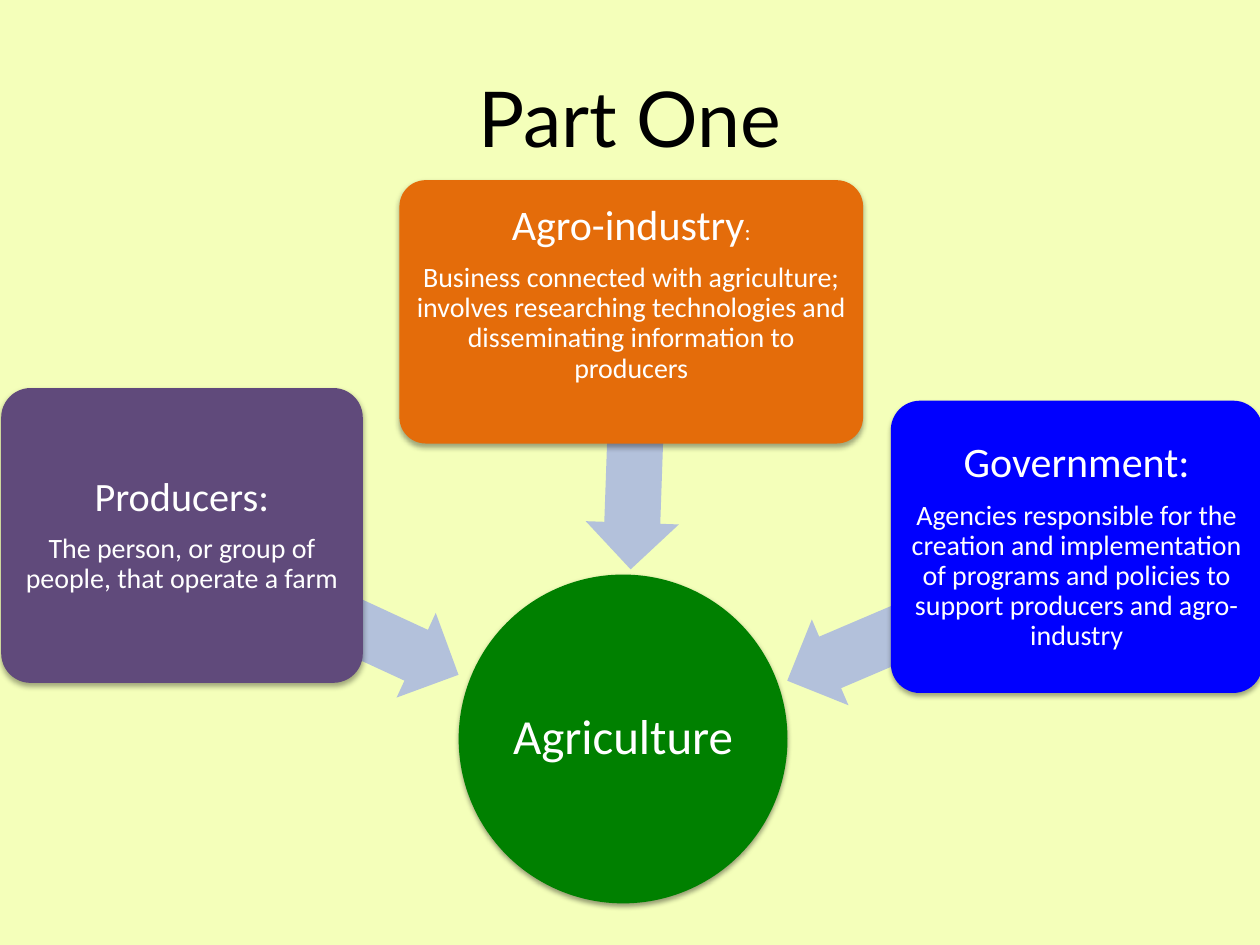
from lxml.etree import SubElement
from pptx import Presentation
from pptx.dml.color import RGBColor
from pptx.enum.shapes import MSO_SHAPE
from pptx.enum.text import MSO_ANCHOR, PP_ALIGN
from pptx.oxml.ns import qn
from pptx.util import Inches, Pt

CREAM = RGBColor(0xF4, 0xFF, 0xBA)
BLACK = RGBColor(0, 0, 0)
WHITE = RGBColor(0xFF, 0xFF, 0xFF)
GREEN = RGBColor(0, 0x80, 0)
PURPLE = RGBColor(0x60, 0x4A, 0x7B)
ORANGE = RGBColor(0xE4, 0x6C, 0x0A)
BLUE = RGBColor(0, 0, 0xFF)
MIST = RGBColor(0xB3, 0xC1, 0xDB)

# Box, fill, bottom inset, heading runs, body, arrow box, arrow turn
PARTS = [
    ((0.01, 3.08, 2.87, 2.34), PURPLE, 0.05, [("Producers:", 23)],
     "The person, or group of people, that operate a farm",
     (1.34, 4.48, 2.41, 0.74), 204.8),
    ((3.17, 1.43, 3.68, 2.09), ORANGE, 0.33, [("Agro-industry", 24), (":", 13)],
     "Business connected with agriculture; involves researching "
     "technologies and disseminating information to producers",
     (4.05, 3.16, 1.98, 0.74), 272),
    ((7.07, 3.18, 2.95, 2.32), BLUE, 0.05, [("Government:", 24)],
     "Agencies responsible for the creation and implementation of programs "
     "and policies to support producers and agro-industry",
     (6.15, 4.55, 2.46, 0.74), 336.9),
]


def add_solid(slide, kind, box, fill):
    shape = slide.shapes.add_shape(kind, *map(Inches, box))
    shape.fill.solid()
    shape.fill.fore_color.rgb = fill
    shape.line.fill.background()
    shape.shadow.inherit = False
    return shape


def add_shadow(shape, alpha, dist):
    """Drop a soft black shadow straight down; alpha in percent, dist in points."""
    effects = shape._element.spPr.find(qn("a:effectLst"))
    outer = SubElement(effects, qn("a:outerShdw"), blurRad=str(Pt(3.1)),
                       dist=str(Pt(dist)), dir="5400000", rotWithShape="0")
    color = SubElement(outer, qn("a:srgbClr"), val="000000")
    SubElement(color, qn("a:alpha"), val=str(alpha * 1000))


def set_frame(frame, inset, bottom=None):
    edge = Inches(inset)
    values = {
        "word_wrap": True, "vertical_anchor": MSO_ANCHOR.MIDDLE,
        "margin_left": edge, "margin_right": edge, "margin_top": edge,
        "margin_bottom": edge if bottom is None else Inches(bottom),
    }
    for name, value in values.items():
        setattr(frame, name, value)


def write_runs(para, runs, color=WHITE, face="Calibri", spacing=0.9):
    para.alignment = PP_ALIGN.CENTER
    para.line_spacing = spacing
    for text, size in runs:
        run = para.add_run()
        run.text = text
        run.font.name = face
        run.font.size = Pt(size)
        run.font.color.rgb = color


def add_title(slide, box):
    frame = slide.shapes.add_textbox(*map(Inches, box)).text_frame
    set_frame(frame, 0.1, 0.05)
    frame.margin_top = Inches(0.05)
    write_runs(frame.paragraphs[0], [("Part One", 44)], BLACK, "Lato", 1.0)


def add_hub(slide, box):
    hub = add_solid(slide, MSO_SHAPE.OVAL, box, GREEN)
    add_shadow(hub, 38, 1.6)
    set_frame(hub.text_frame, 0.02)
    write_runs(hub.text_frame.paragraphs[0], [("Agriculture", 28)])


def add_arrow(slide, box, turn):
    arrow = add_solid(slide, MSO_SHAPE.LEFT_ARROW, box, MIST)
    arrow.adjustments[0] = 0.6
    arrow.adjustments[1] = 0.5
    arrow.rotation = turn


def add_card(slide, box, fill, bottom, heading, body):
    card = add_solid(slide, MSO_SHAPE.ROUNDED_RECTANGLE, box, fill)
    card.adjustments[0] = 0.1
    add_shadow(card, 35, 1.8)
    frame = card.text_frame
    set_frame(frame, 0.05, bottom)
    head = frame.paragraphs[0]
    write_runs(head, heading)
    head.space_after = Pt(8)
    write_runs(frame.add_paragraph(), [(body, 16)])


def main():
    deck = Presentation()
    deck.slide_width, deck.slide_height = Inches(10), Inches(7.5)
    slide = deck.slides.add_slide(deck.slide_layouts[6])
    slide.background.fill.solid()
    slide.background.fill.fore_color.rgb = CREAM
    add_title(slide, (0.5, 0.3, 9, 1.25))
    add_hub(slide, (3.64, 4.56, 2.61, 2.61))
    for box, fill, bottom, heading, body, shaft, turn in PARTS:
        add_arrow(slide, shaft, turn)
        add_card(slide, box, fill, bottom, heading, body)
    deck.save("out.pptx")


if __name__ == "__main__":
    main()
